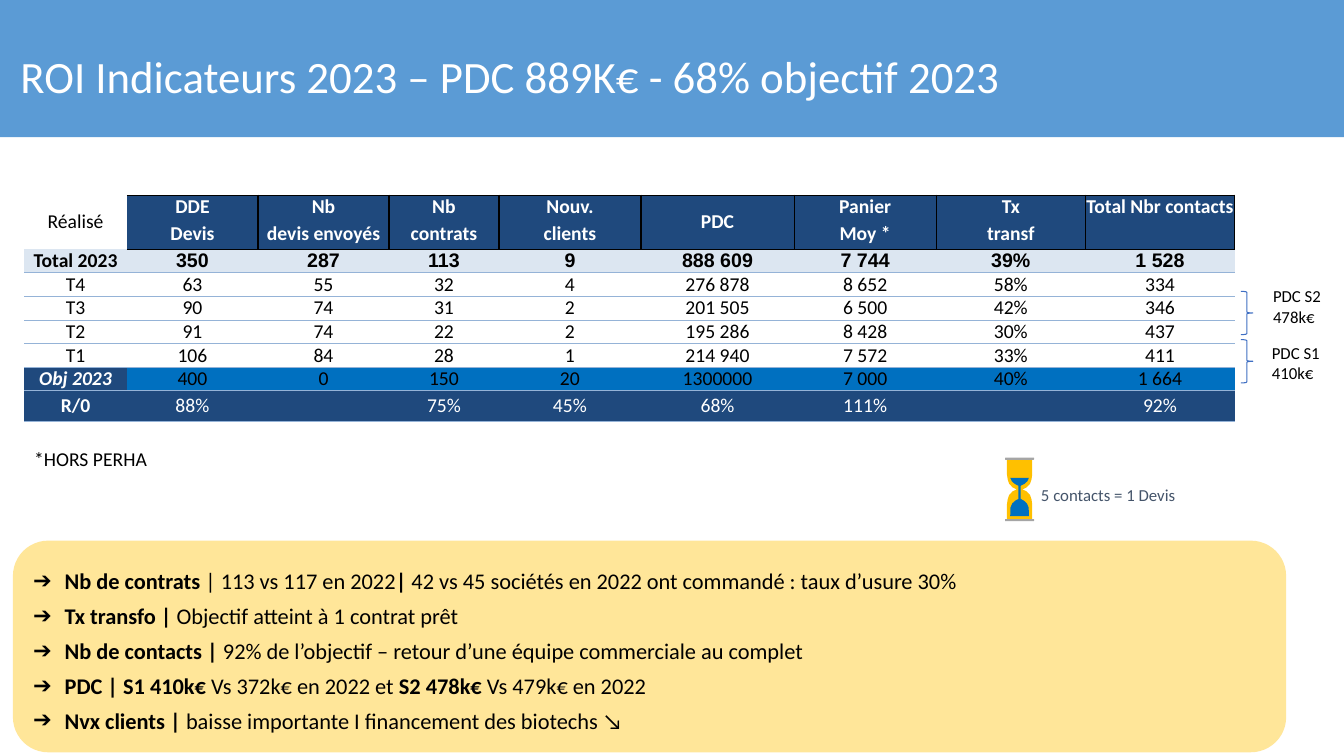
from lxml.etree import SubElement
from pptx import Presentation
from pptx.dml.color import RGBColor
from pptx.enum.shapes import MSO_SHAPE
from pptx.enum.text import MSO_ANCHOR, PP_ALIGN
from pptx.oxml import parse_xml
from pptx.oxml.ns import nsdecls, qn
from pptx.util import Pt

WHITE = RGBColor(0xFF, 0xFF, 0xFF)
BLACK = RGBColor(0, 0, 0)
BANNER = RGBColor(0x5B, 0x9B, 0xD5)
NAVY = RGBColor(0x1F, 0x49, 0x7D)
BLUE = RGBColor(0x00, 0x70, 0xC0)
PALE = RGBColor(0xDC, 0xE6, 0xF1)
RULE = RGBColor(0x95, 0xB3, 0xD7)
BRACE = RGBColor(0x3F, 0x6F, 0xC3)
GOLD = RGBColor(0xFF, 0xC0, 0x00)
GREY = RGBColor(0xA5, 0xA5, 0xA5)
SLATE = RGBColor(0x44, 0x54, 0x6A)
CREAM = RGBColor(0xFF, 0xE6, 0x99)


def add_text(p, text, size=14, color=BLACK, bold=False, italic=False, font="Calibri"):
    r = p.add_run()
    r.text = text
    r.font.name, r.font.size, r.font.color.rgb = font, Pt(size), color
    r.font.bold, r.font.italic = bold, italic


def paint(sp, fill=None, line=None):
    sp.shadow.inherit = False
    if fill is None:
        sp.fill.background()
    else:
        sp.fill.solid()
        sp.fill.fore_color.rgb = fill
    if line is None:
        sp.line.fill.background()
    else:
        sp.line.color.rgb = line
        sp.line.width = Pt(0.75)


prs = Presentation()
prs.slide_width, prs.slide_height = Pt(960), Pt(540)
s = prs.slides.add_slide(prs.slide_layouts[6])

# Banner
sp = s.shapes.add_shape(MSO_SHAPE.RECTANGLE, 0, 0, Pt(960), Pt(98))
paint(sp, BANNER)

# Title and labels: left, top, width, height, size, colour, lines
LABELS = [
    (5.6, 0, 896, 108, 32, WHITE, ["ROI Indicateurs 2023 – PDC 889K€ - 68% objectif 2023"]),
    (736.5, 342.7, 127, 22, 12, SLATE, ["5 contacts = 1 Devis"]),
    (902.2, 200.9, 57, 36, 12, BLACK, ["PDC S2", "478k€"]),
    (901.4, 241.2, 58, 36, 12, BLACK, ["PDC S1", "410k€"]),
    (17.3, 315.4, 128, 24, 14, BLACK, ["*HORS PERHA"]),
]
for x, y, w, h, size, color, lines in LABELS:
    tf = s.shapes.add_textbox(Pt(x), Pt(y), Pt(w), Pt(h)).text_frame
    tf.word_wrap = True
    tf.vertical_anchor = MSO_ANCHOR.MIDDLE if size == 32 else MSO_ANCHOR.TOP
    if size == 32:
        tf.margin_left = tf.margin_right = Pt(9)
    for i, line in enumerate(lines):
        p = tf.add_paragraph() if i else tf.paragraphs[0]
        add_text(p, line, size, color)

# Results table
ROWS = [
    ["Réalisé", "DDE", "Nb", "Nb", "Nouv.", "PDC", "Panier", "Tx", "Total Nbr contacts"],
    ["", "Devis", "devis envoyés", "contrats", "clients", "", "Moy *", "transf", ""],
    ["Total 2023", "350", "287", "113", "9", "888 609", "7 744", "39%", "1 528"],
    ["T4", "63", "55", "32", "4", "276 878", "8 652", "58%", "334"],
    ["T3", "90", "74", "31", "2", "201 505", "6 500", "42%", "346"],
    ["T2", "91", "74", "22", "2", "195 286", "8 428", "30%", "437"],
    ["T1", "106", "84", "28", "1", "214 940", "7 572", "33%", "411"],
    ["Obj 2023", "400", "0", "150", "20", "1300000", "7 000", "40%", "1 664"],
    ["R/0", "88%", "", "75%", "45%", "68%", "111%", "", "92%"],
]
COLS = [73.4, 93.6, 93.6, 78.5, 101.5, 109.4, 101.5, 106.6, 106.6]
HEIGHTS = [14, 14, 16, 16, 16, 16, 16, 14, 14]
FILLS = [NAVY, NAVY, PALE, None, None, None, None, BLUE, NAVY]
tb = s.shapes.add_table(9, 9, Pt(17.3), Pt(139.5), Pt(sum(COLS)), Pt(sum(HEIGHTS))).table
tb.first_row = tb.horz_banding = False
for col, width in zip(tb.columns, COLS):
    col.width = Pt(width)
for row, height in zip(tb.rows, HEIGHTS):
    row.height = Pt(height)
for i, row in enumerate(ROWS):
    for j, text in enumerate(row):
        cell = tb.cell(i, j)
        cell.margin_left = cell.margin_right = cell.margin_top = cell.margin_bottom = 0
        cell.vertical_anchor = MSO_ANCHOR.MIDDLE
        fill = FILLS[i]
        if j == 0 and i < 2:
            fill = None
        elif j == 0 and i == 7:
            fill = NAVY
        if fill is None:
            cell.fill.background()
        else:
            cell.fill.solid()
            cell.fill.fore_color.rgb = fill
        p = cell.text_frame.paragraphs[0]
        p.alignment = PP_ALIGN.CENTER
        add_text(p, text, color=WHITE if fill == NAVY else BLACK,
                 bold=(i < 3 and (i, j) != (0, 0)) or (i > 6 and j == 0),
                 italic=(i == 7 and j == 0), font="Arial" if i == 2 and j else "Calibri")
        # Borders: black frame around the headings, thin rules below
        if i < 2:
            edges = {"R": (BLACK, 1), "T" if i == 0 else "B": (BLACK, 1)} if j else {}
            if j > 1:
                edges["L"] = (BLACK, 1)
            if j == 5:
                edges["B"] = (BLACK, 1)
        else:
            edges = {"T": (RULE, 0.5), "B": (RULE, 0.5)}
            if i == 2:
                edges["T"] = (BLACK, 1)
                if j == 0:
                    del edges["T"]
        tcPr = cell._tc.get_or_add_tcPr()
        for k, side in enumerate("LRTB"):
            ln = parse_xml(f"<a:ln{side} {nsdecls('a')}/>")
            if side in edges:
                color, width = edges[side]
                ln.set("w", str(Pt(width)))
                SubElement(SubElement(ln, qn("a:solidFill")), qn("a:srgbClr")).set("val", str(color))
            else:
                SubElement(ln, qn("a:noFill"))
            tcPr.insert(k, ln)
for j in (0, 5):
    tb.cell(0, j).merge(tb.cell(1, j))

# Semester braces
for y in (208.1, 242.6):
    sp = s.shapes.add_shape(MSO_SHAPE.RIGHT_BRACE, Pt(886.3), Pt(y), Pt(8.6), Pt(31))
    paint(sp, line=BRACE)

# Hourglass: right-hand profiles (half width, y), mirrored about the axis
AXIS = 728.3
upper = [(9, 327.6), (9, 339), (8.5, 342.5), (7.5, 345.5), (5, 348.2), (2, 349.6)]
glass = upper + [(dx, 699.2 - y) for dx, y in reversed(upper)]
sand = [(6.7, 341.3), (5.5, 343.8), (3.5, 345.6), (0.8, 347), (0.8, 356.4),
        (3, 357.6), (5.2, 359.6), (6.5, 362.5), (6.7, 368.6)]
hourglass = s.shapes.add_group_shape()
for profile, fill in ((glass, GOLD), (sand, BLUE)):
    pts = [(Pt(AXIS + dx), Pt(y)) for dx, y in profile]
    pts += [(Pt(AXIS - dx), Pt(y)) for dx, y in reversed(profile)]
    fb = hourglass.shapes.build_freeform(*pts[0], scale=1.0)
    fb.add_line_segments(pts[1:], close=True)
    paint(fb.convert_to_shape(), fill)
for y in (326.9, 370.8):
    sp = hourglass.shapes.add_shape(MSO_SHAPE.ROUNDED_RECTANGLE, Pt(718), Pt(y), Pt(20.6), Pt(1.5))
    paint(sp, GREY)

# Key points, with alternate bold and regular runs
POINTS = [
    ["Nb de contrats ", "| 113 vs 117 en 2022", "| ",
     "42 vs 45 sociétés en 2022 ont commandé : taux d’usure 30%"],
    ["Tx transfo |", " Objectif atteint à 1 contrat prêt"],
    ["Nb de contacts |", " 92% de l’objectif – retour d’une équipe commerciale au complet"],
    ["PDC | S1 410k€ ", "Vs 372k€ en 2022 et ", "S2 478k€ ", "Vs 479k€ en 2022"],
    ["Nvx clients | ", "baisse importante I financement des biotechs ↘"],
]
sp = s.shapes.add_shape(MSO_SHAPE.ROUNDED_RECTANGLE, Pt(9.2), Pt(386.2), Pt(909.5), Pt(151.2))
paint(sp, CREAM)
tf = sp.text_frame
tf.word_wrap = True
tf.vertical_anchor = MSO_ANCHOR.MIDDLE
for i, runs in enumerate(POINTS):
    p = tf.add_paragraph() if i else tf.paragraphs[0]
    p.alignment = PP_ALIGN.LEFT
    p.line_spacing = 1.3
    pPr = p._p.get_or_add_pPr()
    pPr.set("marL", str(Pt(22.5)))
    pPr.set("indent", str(-Pt(22.5)))
    SubElement(pPr, qn("a:buFont")).set("typeface", "Arial")
    SubElement(pPr, qn("a:buChar")).set("char", "➔")
    for k, text in enumerate(runs):
        add_text(p, text, 16, bold=k % 2 == 0)

prs.save("out.pptx")
